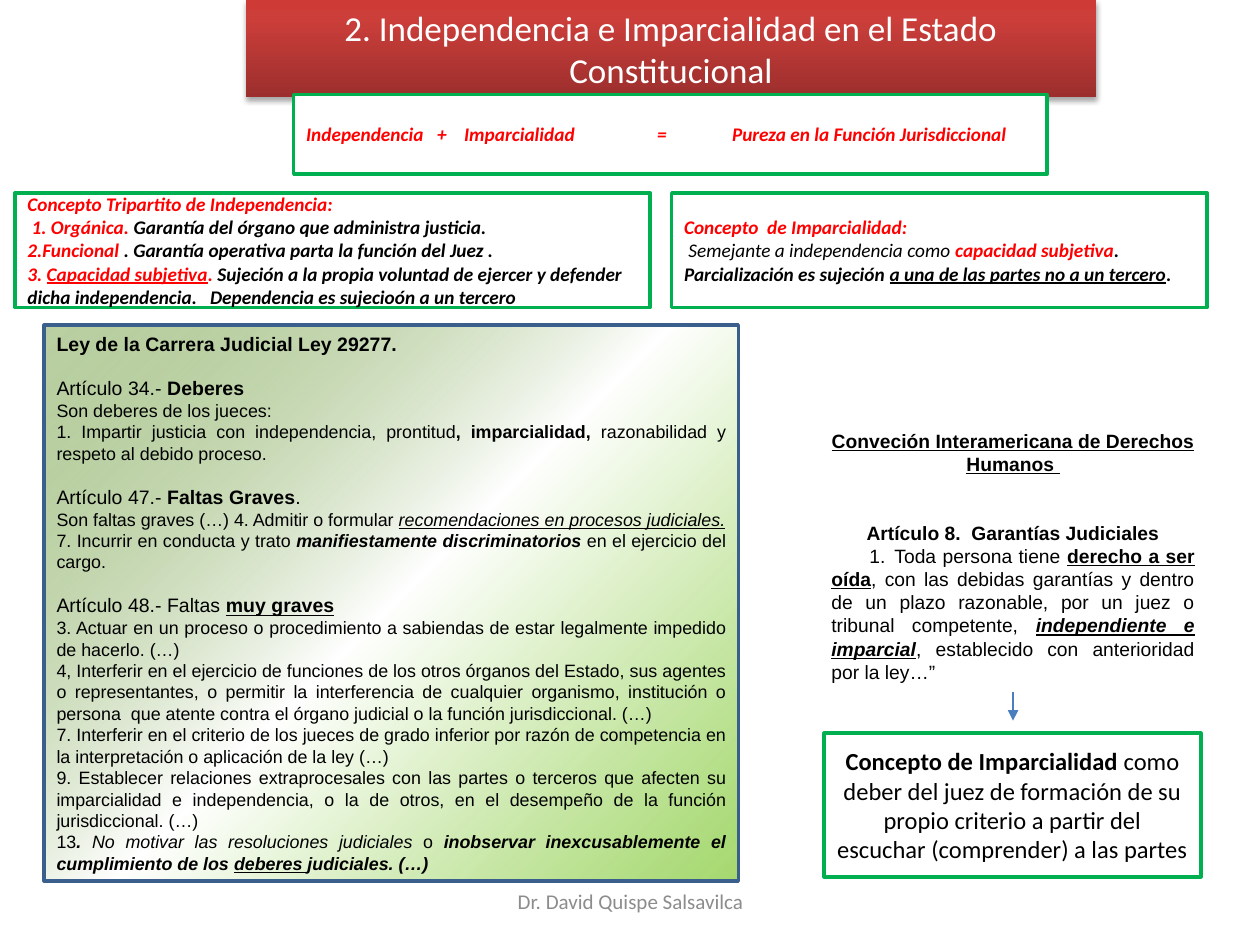
from dataclasses import dataclass

from lxml import etree
from pptx import Presentation
from pptx import util as u
from pptx.dml import color as col
from pptx.enum import shapes, text
from pptx.oxml import ns, parse_xml

Pt = u.Pt


@dataclass(frozen=True)
class Theme:
    red: str = "FF0000"
    black: str = "000000"
    white: str = "FFFFFF"
    grey: str = "8C8C8C"
    green: str = "00B050"
    navy: str = "3A5F8C"
    blue: str = "4B7EBC"
    banner: tuple = ((0, "9C2F2D", 100), (80, "CB3E3A", 100), (100, "CE3B37", 100))
    glow: tuple = ((0, "99D35B", 88), (50, "FFFFFF", 100), (100, "5E9127", 42))
    sans: str = "Calibri"
    legal: str = "Arial"
    title: float = 20
    key: float = 14
    foot: float = 12
    body: float = 11
    head: float = 11.1
    law: float = 10.2


T = Theme()
LEFT, MID, JUST = text.PP_ALIGN.LEFT, text.PP_ALIGN.CENTER, text.PP_ALIGN.JUSTIFY
TOP, CENTRE = text.MSO_ANCHOR.TOP, text.MSO_ANCHOR.MIDDLE


def rgb(code):
    return col.RGBColor.from_string(code)


def para(frame, runs, size, font=T.sans, ink=T.black, align=LEFT, gap=0, indent=0, tabs=()):
    p = frame.paragraphs[0]
    if p.runs:
        p = frame.add_paragraph()
    p.alignment = align
    p.space_before = Pt(gap)
    props = p._p.get_or_add_pPr()
    if indent:
        props.set("indent", str(Pt(indent)))
    if tabs:
        stops = etree.SubElement(props, ns.qn("a:tabLst"))
        for pos in tabs:
            etree.SubElement(stops, ns.qn("a:tab"), pos=str(Pt(pos)), algn="l")
    for words, marks in runs:
        run = p.add_run()
        run.text = words
        face = run.font
        face.name, face.size = font, Pt(size)
        face.bold, face.italic, face.underline = (m in marks for m in "biu")
        face.color.rgb = rgb(T.red if "r" in marks else ink)


def setup(shape, anchor):
    frame = shape.text_frame
    frame.word_wrap = True
    frame.vertical_anchor = anchor
    return frame


def box(slide, place, line=None, anchor=CENTRE):
    shape = slide.shapes.add_shape(shapes.MSO_SHAPE.RECTANGLE, *map(Pt, place))
    shape.shadow.inherit = False
    shape.fill.solid()
    shape.fill.fore_color.rgb = rgb(T.white)
    if line:
        shape.line.color.rgb = rgb(line)
        shape.line.width = Pt(2)
    else:
        shape.line.fill.background()
    return shape, setup(shape, anchor)


def label(slide, place, anchor=TOP):
    return setup(slide.shapes.add_textbox(*map(Pt, place)), anchor)


def blend(shape, stops, way):
    marks = "".join(
        f'<a:gs pos="{pos * 1000}"><a:srgbClr val="{code}">'
        f'<a:alpha val="{alpha * 1000}"/></a:srgbClr></a:gs>'
        for pos, code, alpha in stops)
    grad = parse_xml(f'<a:gradFill {ns.nsdecls("a")} rotWithShape="1">'
                     f'<a:gsLst>{marks}</a:gsLst>{way}</a:gradFill>')
    props = shape._element.spPr
    props.replace(props.find(ns.qn("a:solidFill")), grad)


def shade(shape):
    effect = shape._element.spPr.find(ns.qn("a:effectLst"))
    effect.append(parse_xml(
        f'<a:outerShdw {ns.nsdecls("a")} blurRad="{Pt(3.1)}" dist="{Pt(1.8)}" dir="5400000" '
        'rotWithShape="0"><a:srgbClr val="000000"><a:alpha val="35000"/></a:srgbClr></a:outerShdw>'))


def arrow(slide, *ends):
    link = slide.shapes.add_connector(shapes.MSO_CONNECTOR.STRAIGHT, *map(Pt, ends))
    link.line.color.rgb = rgb(T.blue)
    link.line.width = Pt(0.75)
    etree.SubElement(link.line._get_or_add_ln(), ns.qn("a:tailEnd"), type="triangle")
    etree.SubElement(link._element.spPr, ns.qn("a:effectLst"))


def title(slide):
    shape, frame = box(slide, (140.4, 0, 486, 55.4), anchor=TOP)
    blend(shape, T.banner, '<a:lin ang="16200000" scaled="0"/>')
    shade(shape)
    para(frame, [("2. Independencia e Imparcialidad en el Estado Constitucional", "")],
         T.title, ink=T.white, align=MID)


def card(slide, place, rows, size=T.body, **style):
    frame = box(slide, place, T.green)[1]
    for runs in rows:
        para(frame, runs, size, **style)


def statute(slide):
    shape, frame = box(slide, (25.2, 185.8, 396.7, 317.5), T.navy)
    blend(shape, T.glow, '<a:path path="circle"><a:fillToRect l="100000" t="100000"/></a:path>')
    parts = [
        ([("Ley de la Carrera Judicial Ley 29277.", "b")], []),
        ([("Artículo 34.- ", ""), ("Deberes ", "b")], [
            [("Son deberes de los jueces:", "")],
            [("1. Impartir justicia con independencia, prontitud", ""), (", imparcialidad, ", "b"),
             ("razonabilidad y respeto al debido proceso.", "")]]),
        ([("Artículo 47.- ", ""), ("Faltas Graves", "b"), (".", "")], [
            [("Son faltas graves (…) 4. Admitir o formular ", ""),
             ("recomendaciones en procesos judiciales.", "iu")],
            [("7. Incurrir en conducta y trato ", ""), ("manifiestamente discriminatorios ", "bi"),
             ("en el ejercicio del cargo.", "")]]),
        ([("Artículo 48.- Faltas ", ""), ("muy graves", "bu")], [
            [("3. Actuar en un proceso o procedimiento a sabiendas de estar legalmente impedido "
              "de hacerlo. (…)", "")],
            [("4, Interferir en el ejercicio de funciones de los otros órganos del Estado, sus "
              "agentes o representantes, o permitir la interferencia de cualquier organismo, "
              "institución o persona  que atente contra el órgano judicial o la función "
              "jurisdiccional. (…)", "")],
            [("7. Interferir en el criterio de los jueces de grado inferior por razón de "
              "competencia en la interpretación o aplicación de la ley (…)", "")],
            [("9. Establecer relaciones extraprocesales con las partes o terceros que afecten su "
              "imparcialidad e independencia, o la de otros, en el desempeño de la función "
              "jurisdiccional. (…)", "")],
            [("13", ""), (". ", "bi"), ("No motivar las resoluciones judiciales ", "i"), ("o ", ""),
             ("inobservar inexcusablemente el cumplimiento de los ", "bi"), ("deberes ", "biu"),
             ("judiciales. (…)", "bi")]]),
    ]
    for n, (head, rows) in enumerate(parts):
        para(frame, head, T.head, T.legal, align=JUST, gap=12 if n else 0)
        for runs in rows:
            para(frame, runs, T.law, T.legal, align=JUST)


def treaty(slide):
    frame = label(slide, (468, 241.9, 221.8, 154.1))
    para(frame, [("Conveción Interamericana de Derechos Humanos ", "bu")],
         T.body, T.legal, align=MID)
    para(frame, [("Artículo 8.  Garantías Judiciales", "b")], T.body, T.legal, align=MID, gap=26)
    para(frame, [("1.\tToda persona tiene ", ""), ("derecho a ser oída", "bu"),
                 (", con las debidas garantías y dentro de un plazo razonable, por un juez o "
                  "tribunal competente, ", ""), ("independiente e imparcial", "biu"),
                 (", establecido con anterioridad por la ley…”", "")],
         T.body, T.legal, align=JUST, indent=21.7, tabs=(45.7,))


def main():
    deck = Presentation()
    deck.slide_width, deck.slide_height = Pt(720), Pt(540)
    slide = deck.slides.add_slide(deck.slide_layouts[6])
    title(slide)
    card(slide, (8.6, 110.2, 362.9, 65.5), [
        [("Concepto Tripartito de Independencia:", "bir")],
        [(" 1. Orgánica. ", "bir"), ("Garantía del órgano que administra justicia.", "bi")],
        [("2.Funcional ", "bir"), (". Garantía operativa parta la función del Juez .", "bi")],
        [("3. ", "bir"), ("Capacidad subjetiva", "biur"), (". ", "bir"),
         ("Sujeción a la propia voluntad de ejercer y defender dicha independencia.   "
          "Dependencia es sujecioón a un tercero", "bi")]])
    statute(slide)
    card(slide, (167.8, 54, 430.6, 45.4), [
        [("Independencia\t+\tImparcialidad\t=\tPureza en la Función Jurisdiccional", "bir")]],
        tabs=(74.9, 90.3, 200.6, 243.4))
    card(slide, (383.8, 110.2, 306, 65.5), [
        [("Concepto  de Imparcialidad:", "bir")],
        [(" Semejante a independencia como ", "i"), ("capacidad subjetiva", "bir"),
         (". Parcialización es sujeción ", "bi"), ("a una de las partes no a un tercero", "biu"),
         (".", "bi")]])
    treaty(slide)
    card(slide, (470.9, 419, 215.3, 82.1), [
        [("Concepto de Imparcialidad ", "b"),
         ("como deber del juez de formación de su propio criterio a partir del escuchar "
          "(comprender) a las partes", "")]], T.key, align=MID)
    arrow(slide, 578.9, 395.3, 578.9, 411.8)
    para(label(slide, (246.2, 500.4, 228.2, 28.8), CENTRE),
         [("Dr. David Quispe Salsavilca", "")], T.foot, ink=T.grey, align=MID)
    deck.save("out.pptx")


if __name__ == "__main__":
    main()
